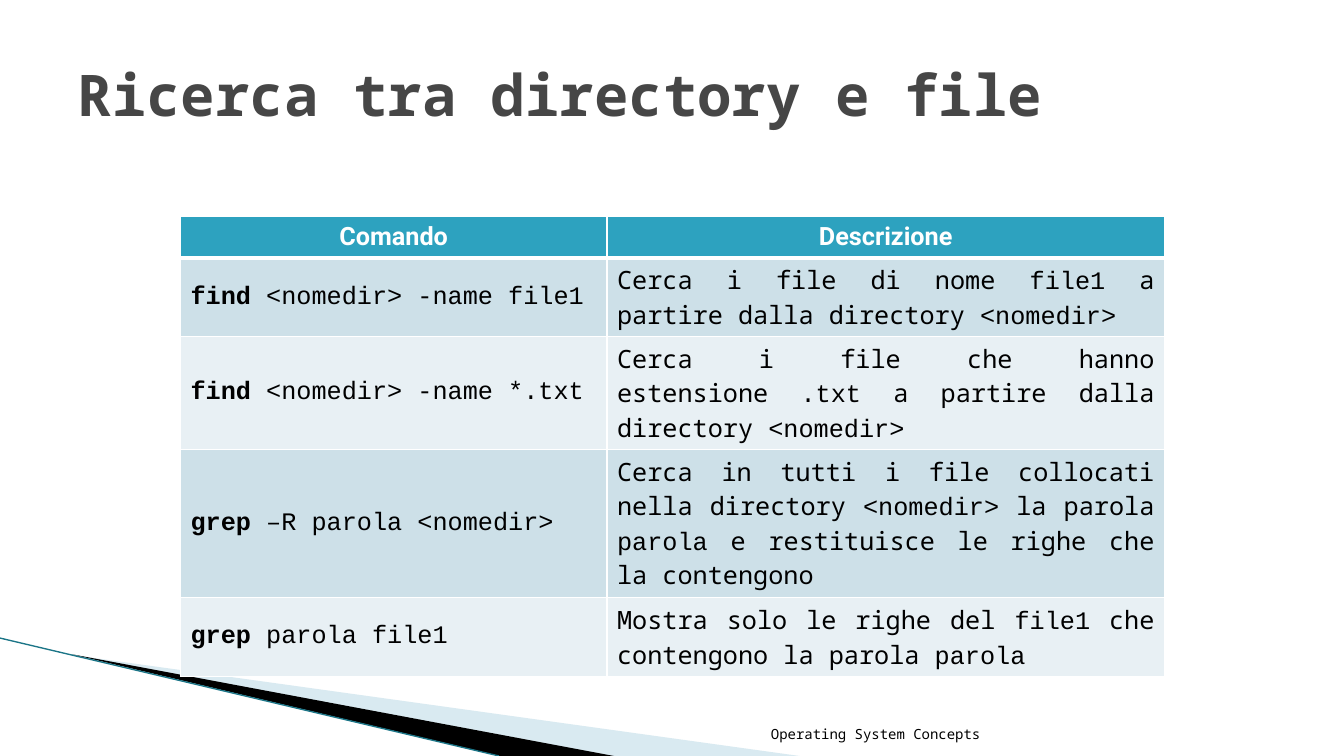
from dataclasses import dataclass

import lxml.etree
import pptx
import pptx.dml.color
import pptx.enum.shapes
import pptx.enum.text
import pptx.oxml.ns
import pptx.util

Inches = pptx.util.Inches
Pt = pptx.util.Pt
Align = pptx.enum.text.PP_ALIGN
Anchor = pptx.enum.text.MSO_ANCHOR
qn = pptx.oxml.ns.qn

COLORS = {
    "title": "464646", "text": "000000", "white": "FFFFFF", "header": "2DA2BF",
    "odd_row": "CDE0E8", "even_row": "E8F0F4",
    "pale_wedge": "A0CBDC", "dark_wedge": "000000", "edge": "1B7587",
}
PROSE, CODE, HEADING = "Noto Sans Mono", "Courier New", "Roboto"


@dataclass
class TextRun:
    text: str
    font: str = PROSE
    size: float = 18
    color: str = "text"
    bold: bool = False


@dataclass
class Command:
    name: str
    arguments: str
    description: list[TextRun]
    height: float


@dataclass
class Wedge:
    points: list[tuple[float, float]]
    color: str
    opacity: int = 100


COMMANDS = [
    Command("find", " <nomedir> -name file1", [
        TextRun("Cerca i file di nome "), TextRun("file1", CODE),
        TextRun(" a partire dalla directory "), TextRun("<nomedir>", CODE)], 0.78),
    Command("find", " <nomedir> -name *.txt", [
        TextRun("Cerca i file che hanno estensione "), TextRun(".txt", CODE),
        TextRun(" a partire dalla directory "), TextRun("<nomedir>", CODE)], 1.12),
    Command("grep", " –R parola <nomedir>", [
        TextRun("Cerca in tutti i file collocati nella directory "),
        TextRun("<nomedir>", CODE), TextRun(" la parola "), TextRun("parola ", CODE),
        TextRun("e restituisce le righe che la contengono")], 1.47),
    Command("grep", " parola file1", [
        TextRun("Mostra solo le righe del "), TextRun("file1", CODE),
        TextRun(" che contengono la parola "), TextRun("parola", CODE)], 0.78),
]
WEDGES = [
    Wedge([(0.73, 6.5), (7.93, 7.5), (6.08, 7.5)], "pale_wedge", 40),
    Wedge([(0.71, 6.49), (6.09, 7.5), (4.96, 7.5)], "dark_wedge"),
]


def rgb(color: str) -> pptx.dml.color.RGBColor:
    return pptx.dml.color.RGBColor.from_string(COLORS[color])


def write(frame, runs: list[TextRun], align: Align) -> None:
    paragraph = frame.paragraphs[0]
    paragraph.alignment = align
    for item in runs:
        run = paragraph.add_run()
        run.text = item.text
        run.font.name = item.font
        run.font.size = Pt(item.size)
        run.font.bold = item.bold
        run.font.color.rgb = rgb(item.color)


def draw_wedge(slide, wedge: Wedge) -> None:
    start, *others = [(Inches(x), Inches(y)) for x, y in wedge.points]
    builder = slide.shapes.build_freeform(*start)
    builder.add_line_segments(others, close=True)
    shape = builder.convert_to_shape()
    shape.shadow.inherit = False
    shape.line.fill.background()
    shape.fill.solid()
    shape.fill.fore_color.rgb = rgb(wedge.color)
    if wedge.opacity < 100:
        tint = next(shape._element.spPr.iter(qn("a:srgbClr")))
        lxml.etree.SubElement(tint, qn("a:alpha"), val=str(wedge.opacity * 1000))


def draw_edge(slide) -> None:
    edge = slide.shapes.add_connector(
        pptx.enum.shapes.MSO_CONNECTOR.STRAIGHT,
        Inches(0), Inches(6.33), Inches(4.95), Inches(7.5))
    edge.line.color.rgb = rgb("edge")
    edge.line.width = Pt(0.95)
    lxml.etree.SubElement(edge._element.spPr, qn("a:effectLst"))


def format_cell(cell, fill: str, top: float = 1, bottom: float = 1) -> None:
    """Give a cell its fill and white borders, with widths in points."""
    properties = cell._tc.get_or_add_tcPr()
    for side, width in {"lnL": 1, "lnR": 1, "lnT": top, "lnB": bottom}.items():
        border = lxml.etree.SubElement(properties, qn(f"a:{side}"), w=str(Pt(width)))
        solid = lxml.etree.SubElement(border, qn("a:solidFill"))
        lxml.etree.SubElement(solid, qn("a:srgbClr"), val=COLORS["white"])
    cell.fill.solid()
    cell.fill.fore_color.rgb = rgb(fill)


def draw_commands(slide) -> None:
    heights = [0.41] + [command.height for command in COMMANDS]
    table = slide.shapes.add_table(
        len(heights), 2, Inches(1.79), Inches(2.15),
        Inches(9.76), Inches(sum(heights))).table
    table.horz_banding = False
    for column, width in zip(table.columns, (4.23, 5.53)):
        column.width = Inches(width)
    for row, height in zip(table.rows, heights):
        row.height = Inches(height)

    for column, heading in enumerate(("Comando", "Descrizione")):
        cell = table.cell(0, column)
        write(cell.text_frame, [TextRun(heading, HEADING, color="white", bold=True)],
              Align.CENTER)
        format_cell(cell, "header", bottom=3)

    for number, command in enumerate(COMMANDS, start=1):
        syntax, description = table.cell(number, 0), table.cell(number, 1)
        syntax.vertical_anchor = Anchor.MIDDLE
        write(syntax.text_frame,
              [TextRun(command.name, CODE, bold=True), TextRun(command.arguments, CODE)],
              Align.LEFT)
        write(description.text_frame, command.description, Align.JUSTIFY)
        for cell in (syntax, description):
            format_cell(cell, "odd_row" if number % 2 else "even_row",
                        top=3 if number == 1 else 1)


def draw_title(slide) -> None:
    title = slide.shapes.title
    title.left, title.top = Inches(0.67), Inches(0.3)
    title.width, title.height = Inches(12), Inches(1.25)
    title.text_frame.auto_size = pptx.enum.text.MSO_AUTO_SIZE.NONE
    title.text_frame.vertical_anchor = Anchor.MIDDLE
    write(title.text_frame,
          [TextRun("Ricerca tra directory e file", size=41, color="title", bold=True)],
          Align.LEFT)


def draw_footer(slide) -> None:
    footer = slide.shapes.add_textbox(
        Inches(6.39), Inches(7.01), Inches(3.43), Inches(0.4)).text_frame
    footer.word_wrap = True
    footer.vertical_anchor = Anchor.BOTTOM
    write(footer, [TextRun("Operating System Concepts", size=10)], Align.RIGHT)


def main() -> None:
    presentation = pptx.Presentation()
    presentation.slide_width = Inches(13.33)
    presentation.slide_height = Inches(7.5)
    slide = presentation.slides.add_slide(presentation.slide_layouts[5])
    for wedge in WEDGES:
        draw_wedge(slide, wedge)
    draw_edge(slide)
    draw_footer(slide)
    draw_title(slide)
    draw_commands(slide)
    presentation.save("out.pptx")


if __name__ == "__main__":
    main()
